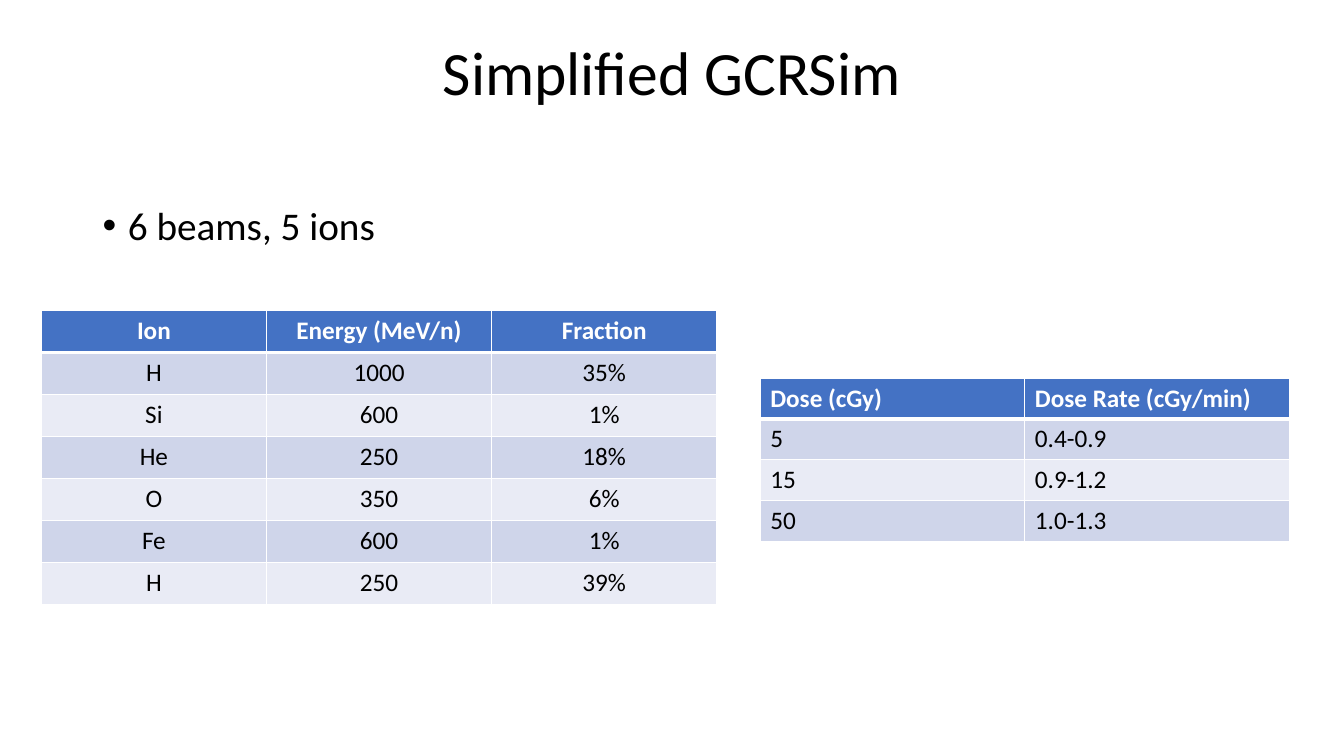
from lxml import etree
from pptx import Presentation
from pptx.dml.color import RGBColor
from pptx.enum.text import MSO_ANCHOR, PP_ALIGN
from pptx.oxml.ns import qn
from pptx.util import Inches, Pt

LEFT, CENTER = PP_ALIGN.LEFT, PP_ALIGN.CENTER
TOP, MIDDLE = MSO_ANCHOR.TOP, MSO_ANCHOR.MIDDLE
WIDTH, HEIGHT = 13.33, 7.5
FONT = "Calibri"
BLACK, WHITE = "000000", "FFFFFF"
HEADER_FILL = "4472C4"
BAND_FILLS = ("CFD5EA", "E9EBF5")
THIN, THICK = 1, 3

BEAMS = [
    ("Ion", "Energy (MeV/n)", "Fraction"),
    ("H", "1000", "35%"),
    ("Si", "600", "1%"),
    ("He", "250", "18%"),
    ("O", "350", "6%"),
    ("Fe", "600", "1%"),
    ("H", "250", "39%"),
]
DOSES = [
    ("Dose (cGy)", "Dose Rate (cGy/min)"),
    ("5", "0.4-0.9"),
    ("15", "0.9-1.2"),
    ("50", "1.0-1.3"),
]


def color(value):
    return RGBColor.from_string(value)


def style_paragraph(para, size, ink=BLACK, bold=False, align=LEFT):
    para.alignment = align
    para.font.name = FONT
    para.font.size = Pt(size)
    para.font.bold = bold
    para.font.color.rgb = color(ink)


def add_text(page, box, text, size, align, anchor):
    frame = page.shapes.add_textbox(*map(Inches, box)).text_frame
    frame.word_wrap = True
    frame.vertical_anchor = anchor
    para = frame.paragraphs[0]
    para.text = text
    para.line_spacing = 0.9
    style_paragraph(para, size, align=align)
    return para


def add_title(page, box, text):
    add_text(page, box, text, 44, CENTER, MIDDLE)


def add_bullet(page, box, text):
    para = add_text(page, box, text, 28, LEFT, TOP)
    para.space_before = Pt(10)
    properties = para._p.get_or_add_pPr()
    properties.set("marL", str(Inches(0.25)))
    properties.set("indent", str(-Inches(0.25)))
    etree.SubElement(properties, qn("a:buFont")).set("typeface", "Arial")
    etree.SubElement(properties, qn("a:buChar")).set("char", "•")
    properties.append(properties.find(qn("a:defRPr")))


def set_borders(cell, row):
    widths = {
        "a:lnL": THIN,
        "a:lnR": THIN,
        "a:lnT": THICK if row == 1 else THIN,
        "a:lnB": THICK if row == 0 else THIN,
    }
    properties = cell._tc.get_or_add_tcPr()
    for side, width in widths.items():
        line = etree.SubElement(properties, qn(side), w=str(Pt(width)))
        fill = etree.SubElement(line, qn("a:solidFill"))
        etree.SubElement(fill, qn("a:srgbClr"), val=WHITE)


def add_data_table(page, box, rows, align):
    left, top, width, height = map(Inches, box)
    column_count = len(rows[0])
    table = page.shapes.add_table(
        len(rows), column_count, left, top, width, height
    ).table
    for row, values in enumerate(rows):
        header = row == 0
        for column, value in enumerate(values):
            cell = table.cell(row, column)
            set_borders(cell, row)
            cell.fill.solid()
            cell.fill.fore_color.rgb = color(
                HEADER_FILL if header else BAND_FILLS[(row - 1) % 2]
            )
            cell.text = value
            style_paragraph(
                cell.text_frame.paragraphs[0],
                18, WHITE if header else BLACK, header, align,
            )


def main():
    deck = Presentation()
    deck.slide_width = Inches(WIDTH)
    deck.slide_height = Inches(HEIGHT)
    page = deck.slides.add_slide(deck.slide_layouts[6])
    margin = 0.92
    content_width = WIDTH - 2 * margin
    add_title(page, (margin, 0.02, content_width, 1.45), "Simplified GCRSim")
    add_bullet(page, (margin, 2, content_width, 0.56), "6 beams, 5 ions")
    add_data_table(page, (0.41, 3.08, 6.7, 2.92), BEAMS, CENTER)
    add_data_table(page, (7.54, 3.75, 5.25, 1.62), DOSES, LEFT)
    deck.save("out.pptx")


if __name__ == "__main__":
    main()
